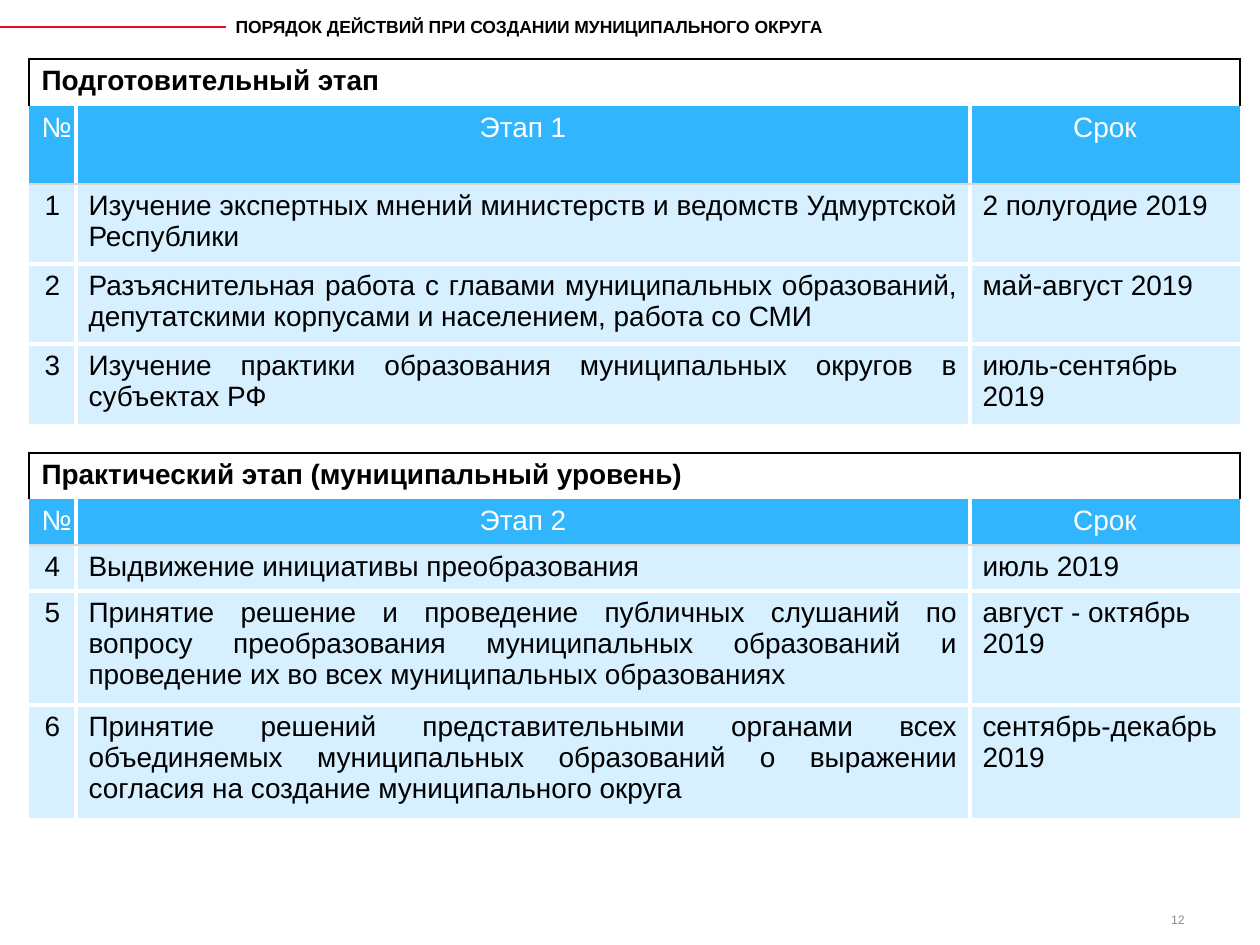
from lxml import etree
from pptx import Presentation
from pptx.dml.color import RGBColor
from pptx.enum.shapes import MSO_CONNECTOR
from pptx.enum.text import MSO_ANCHOR, PP_ALIGN
from pptx.oxml.ns import qn
from pptx.util import Pt

LEFT, CENTER, RIGHT, JUSTIFY = PP_ALIGN.LEFT, PP_ALIGN.CENTER, PP_ALIGN.RIGHT, PP_ALIGN.JUSTIFY
MIDDLE, TOP = MSO_ANCHOR.MIDDLE, MSO_ANCHOR.TOP
STRAIGHT = MSO_CONNECTOR.STRAIGHT
PX = 914400 // 126
FONT = "Arial"
COLORS = {"text": "000000", "white": "FFFFFF", "head": "31B6FD", "body": "D6F0FF",
          "rule": "D9D9D9", "accent": "E70927", "number": "8B8B8B"}

TITLE = "ПОРЯДОК ДЕЙСТВИЙ ПРИ СОЗДАНИИ МУНИЦИПАЛЬНОГО ОКРУГА"
PAGE = "12"
COLS = [47, 894, 270]
ALIGNS = [CENTER, JUSTIFY, LEFT]
STAGES = [
    {"top": 59, "heights": [47, 78, 80, 80, 80], "name": "Подготовительный этап", "rows": [
        ("№", "Этап 1", "Срок"),
        ("1", "Изучение экспертных мнений министерств и ведомств Удмуртской Республики",
         "2 полугодие 2019"),
        ("2", "Разъяснительная работа с главами муниципальных образований, депутатскими "
              "корпусами и населением, работа со СМИ", "май-август 2019"),
        ("3", "Изучение практики образования муниципальных округов в субъектах РФ",
         "июль-сентябрь 2019")]},
    {"top": 453, "heights": [46, 46, 46, 114, 113],
     "name": "Практический этап (муниципальный уровень)", "rows": [
        ("№", "Этап 2", "Срок"),
        ("4", "Выдвижение инициативы преобразования", "июль 2019"),
        ("5", "Принятие решение и проведение публичных слушаний по вопросу преобразования "
              "муниципальных образований и проведение их во всех муниципальных образованиях",
         "август - октябрь 2019"),
        ("6", "Принятие решений представительными органами всех объединяемых муниципальных "
              "образований о выражении согласия на создание муниципального округа",
         "сентябрь-декабрь 2019")]},
]


def rgb(name):
    return RGBColor.from_string(COLORS[name])


def write(tf, text, size=16, color="text", bold=False, align=LEFT):
    p = tf.paragraphs[0]
    p.alignment = align
    r = p.add_run()
    r.text = text
    r.font.name, r.font.size, r.font.bold = FONT, Pt(size), bold
    r.font.color.rgb = rgb(color)


def place(sp, x, y, w, h):
    sp.left, sp.top, sp.width, sp.height = [v * PX for v in (x, y, w, h)]


def set_borders(cell, borders):
    tc_pr = cell._tc.get_or_add_tcPr()
    for i, side in enumerate("LRTB"):
        color, width = borders.get(side, (None, 0))
        ln = etree.Element(qn(f"a:ln{side}"), w=str(Pt(width)))
        if color:
            fill = etree.SubElement(ln, qn("a:solidFill"))
            etree.SubElement(fill, qn("a:srgbClr"), val=COLORS[color])
        else:
            etree.SubElement(ln, qn("a:noFill"))
        tc_pr.insert(i, ln)


def paint(cell, fill, borders):
    cell.fill.solid()
    cell.fill.fore_color.rgb = rgb(fill)
    set_borders(cell, borders)


def add_stage(s, stage):
    heights, rows = stage["heights"], stage["rows"]
    frame = s.shapes.add_table(len(heights), len(COLS), 29 * PX, stage["top"] * PX,
                               sum(COLS) * PX, sum(heights) * PX)
    table = frame.table
    for col, w in zip(table.columns, COLS):
        col.width = w * PX
    for row, h in zip(table.rows, heights):
        row.height = h * PX

    outline = ("text", 1)
    for cell in table.rows[0].cells:
        paint(cell, "white", {"L": outline, "R": outline, "T": outline})
    table.cell(0, 0).merge(table.cell(0, len(COLS) - 1))
    write(table.cell(0, 0).text_frame, stage["name"], bold=True)

    rules = [None, ("rule", 0.96)] + [("white", 2.2)] * (len(rows) - 2) + [None]
    for i, row in enumerate(rows):
        head = i == 0
        for j, text in enumerate(row):
            cell = table.cell(i + 1, j)
            sides = {"T": rules[i], "B": rules[i + 1],
                     "L": ("white", 3) if j else None,
                     "R": ("white", 3) if j < len(COLS) - 1 else None}
            paint(cell, "head" if head else "body", {k: v for k, v in sides.items() if v})
            write(cell.text_frame, text, color="white" if head else "text",
                  align=CENTER if head else ALIGNS[j])


def main():
    prs = Presentation()
    prs.slide_width, prs.slide_height = 1260 * PX, 945 * PX
    s = prs.slides.add_slide(prs.slide_layouts[5])

    title = s.shapes.title
    place(title, 223, 10, 614, 33)
    title.text_frame.word_wrap = False
    title.text_frame.vertical_anchor = TOP
    write(title.text_frame, TITLE, size=10, bold=True)

    line = s.shapes.add_connector(STRAIGHT, -53 * PX, 27 * PX, 226 * PX, 27 * PX)
    line.line.color.rgb = rgb("accent")
    line.line.width = Pt(1.5)
    etree.SubElement(line._element.spPr, qn("a:effectLst"))

    for stage in STAGES:
        add_stage(s, stage)

    number = s.shapes.add_textbox(903 * PX, 905 * PX, 294 * PX, 30 * PX)
    number.text_frame.word_wrap = True
    number.text_frame.vertical_anchor = MIDDLE
    write(number.text_frame, PAGE, size=7, color="number", align=RIGHT)

    prs.save("out.pptx")


if __name__ == "__main__":
    main()
